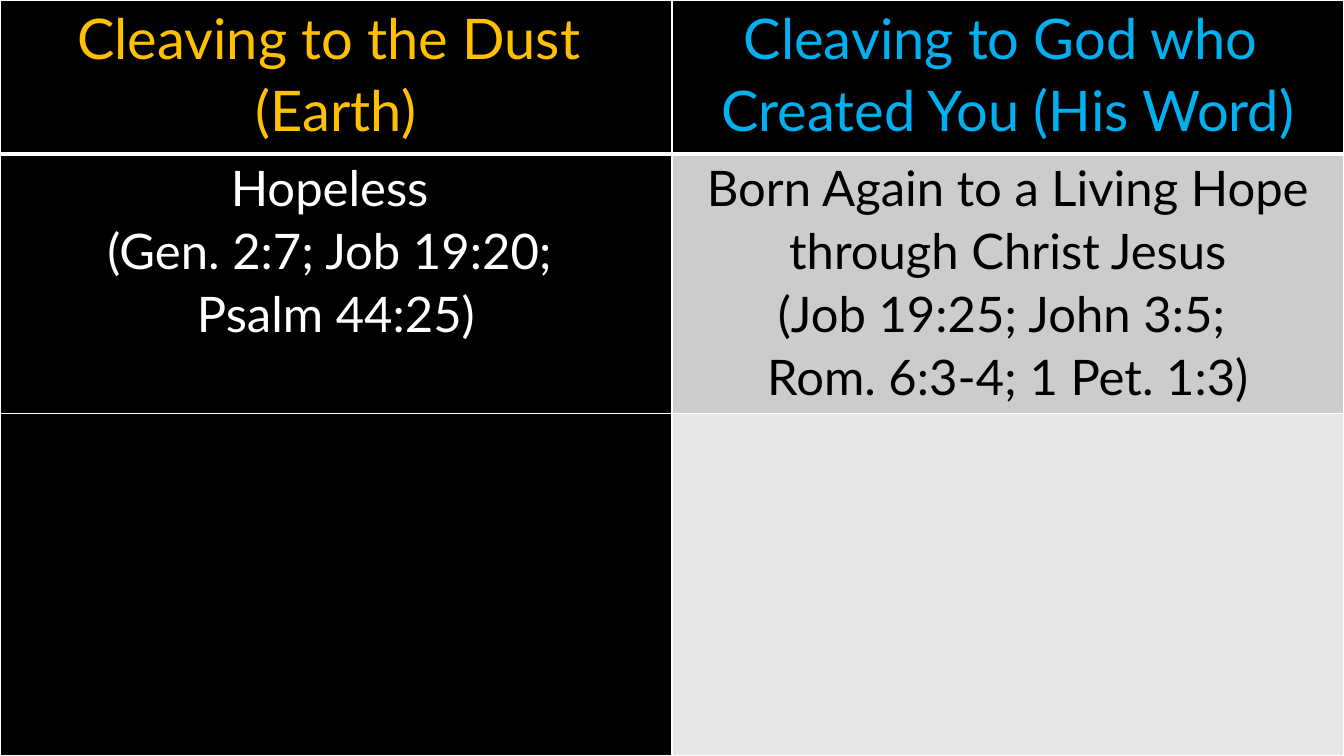
"""Build a slide with a two-column table contrasting dust and God."""
import pptx
import pptx.dml.color
import pptx.enum.text
import pptx.oxml
import pptx.oxml.ns
import pptx.util

Pt = pptx.util.Pt
RGBColor = pptx.dml.color.RGBColor

BLACK = RGBColor(0x00, 0x00, 0x00)
WHITE = RGBColor(0xFF, 0xFF, 0xFF)
GOLD = RGBColor(0xFF, 0xC0, 0x00)
SKY = RGBColor(0x00, 0xB0, 0xF0)
MID_GREY = RGBColor(0xCC, 0xCC, 0xCC)
LIGHT_GREY = RGBColor(0xE7, 0xE7, 0xE7)

WIDTH, HEIGHT = 960, 540
ROW_HEIGHTS = [110.16, 185.04, 244.8]
FONT_SIZES = [40, 35, 35]
CELLS = [
    [
        (["Cleaving to the Dust ", "(Earth)"], GOLD, BLACK),
        (["Cleaving to God who ", "Created You (His Word)"], SKY, BLACK),
    ],
    [
        (["Hopeless ", "(Gen. 2:7; Job 19:20; ", "Psalm 44:25)"], WHITE, BLACK),
        (
            [
                "Born Again to a Living Hope through Christ Jesus",
                "(Job 19:25; John 3:5; ",
                "Rom. 6:3-4; 1 Pet. 1:3)",
            ],
            BLACK,
            MID_GREY,
        ),
    ],
    [([], WHITE, BLACK), ([], BLACK, LIGHT_GREY)],
]


def add_border(cell, side, points):
    """Draw a white line on one side of a table cell."""
    line = pptx.oxml.parse_xml(
        f'<a:ln{side} {pptx.oxml.ns.nsdecls("a")} w="{Pt(points)}">'
        f'<a:solidFill><a:srgbClr val="{WHITE}"/></a:solidFill></a:ln{side}>'
    )
    cell._tc.get_or_add_tcPr().append(line)


deck = pptx.Presentation()
deck.slide_width, deck.slide_height = Pt(WIDTH), Pt(HEIGHT)
page = deck.slides.add_slide(deck.slide_layouts[6])
page.background.fill.solid()
page.background.fill.fore_color.rgb = BLACK

table = page.shapes.add_table(
    len(CELLS), 2, Pt(0), Pt(0), Pt(WIDTH), Pt(HEIGHT)
).table
for column in table.columns:
    column.width = Pt(WIDTH / 2)

for row_index, row_cells in enumerate(CELLS):
    table.rows[row_index].height = Pt(ROW_HEIGHTS[row_index])
    for column_index, (lines, text_color, fill_color) in enumerate(row_cells):
        cell = table.cell(row_index, column_index)
        cell.margin_left = cell.margin_right = Pt(5.4)
        cell.margin_top = cell.margin_bottom = Pt(0)
        for side in "LRTB":
            under_header = (row_index, side) in [(0, "B"), (1, "T")]
            add_border(cell, side, 3 if under_header else 1)
        cell.fill.solid()
        cell.fill.fore_color.rgb = fill_color

        cell.text = "\n".join(lines)
        for para in cell.text_frame.paragraphs:
            para.alignment = pptx.enum.text.PP_ALIGN.CENTER
            para.line_spacing = 1.07
            para.font.name = "Lato"
            para.font.size = Pt(FONT_SIZES[row_index])
            para.font.bold = False
            para.font.color.rgb = text_color

deck.save("out.pptx")
